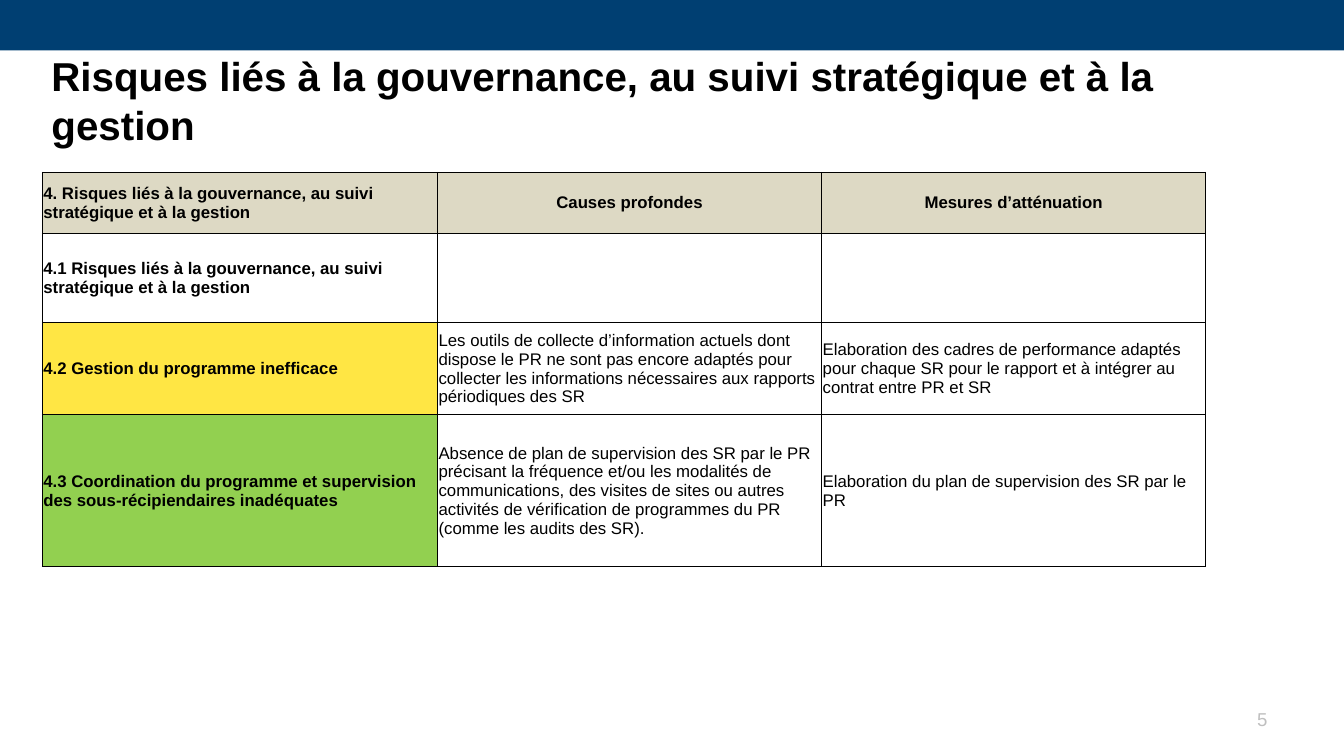
from lxml import etree
from pptx import Presentation
from pptx.dml.color import RGBColor
from pptx.enum.shapes import MSO_SHAPE
from pptx.enum.text import MSO_ANCHOR, MSO_AUTO_SIZE, PP_ALIGN
from pptx.oxml.ns import qn
from pptx.util import Inches, Pt

RECT = MSO_SHAPE.RECTANGLE
TOP, MIDDLE = MSO_ANCHOR.TOP, MSO_ANCHOR.MIDDLE
LEFT, CENTER, RIGHT = PP_ALIGN.LEFT, PP_ALIGN.CENTER, PP_ALIGN.RIGHT
FIXED = MSO_AUTO_SIZE.NONE

TITLE = "Risques liés à la gouvernance, au suivi stratégique et à la gestion"
PAGE = "5"
ROWS = [
    ("4. Risques liés à la gouvernance, au suivi stratégique et à la gestion",
     "Causes profondes",
     "Mesures d’atténuation"),
    ("4.1 Risques liés à la gouvernance, au suivi stratégique et à la gestion",
     "", ""),
    ("4.2 Gestion du programme inefficace",
     "Les outils de collecte d’information actuels dont dispose le PR ne sont "
     "pas encore adaptés pour collecter les informations nécessaires aux "
     "rapports périodiques des SR",
     "Elaboration des cadres de performance adaptés pour chaque SR pour le "
     "rapport et à intégrer au contrat entre PR et SR"),
    ("4.3 Coordination du programme et supervision des sous-récipiendaires "
     "inadéquates",
     "Absence de plan de supervision des SR par le PR précisant la fréquence "
     "et/ou les modalités de communications, des visites de sites ou autres "
     "activités de vérification de programmes du PR (comme les audits des SR).",
     "Elaboration du plan de supervision des SR par le PR"),
]
COLORS = {"band": "003F72", "ink": "000000", "page": "BFBFBF",
          "head": "DDD9C4", "medium": "FFE644", "low": "92D050"}
LEVELS = ["head", None, "medium", "low"]
WIDTHS = [3.92, 3.81, 3.81]
HEIGHTS = [0.6, 0.89, 0.91, 1.51]
FONT = "Arial"


def color(name):
    return RGBColor.from_string(COLORS[name])


def write(frame, text, size, ink="ink", bold=False, align=LEFT):
    frame.text = text
    para = frame.paragraphs[0]
    para.alignment = align
    style = {"name": FONT, "size": Pt(size), "bold": bold}
    for key, value in style.items():
        setattr(para.font, key, value)
    para.font.color.rgb = color(ink)


def inset(item, left, top, right, bottom):
    sides = {"left": left, "top": top, "right": right, "bottom": bottom}
    for side, gap in sides.items():
        setattr(item, f"margin_{side}", Inches(gap))


def border(cell, widths):
    """Put the side lines ahead of the fill, as the schema requires."""
    props = cell._tc.get_or_add_tcPr()
    for spot, (side, width) in enumerate(widths.items()):
        line = etree.Element(qn(f"a:ln{side}"), w=str(Pt(width)))
        fill = etree.SubElement(line, qn("a:solidFill"))
        etree.SubElement(fill, qn("a:srgbClr"), val=COLORS["ink"])
        props.insert(spot, line)


def add_grid(slide):
    last = len(ROWS) - 1
    table = slide.shapes.add_table(
        len(ROWS), len(WIDTHS), Inches(0.42), Inches(1.71),
        Inches(sum(WIDTHS)), Inches(sum(HEIGHTS))).table
    table.first_row = table.horz_banding = False
    for col, width in zip(table.columns, WIDTHS):
        col.width = Inches(width)
    for r, texts in enumerate(ROWS):
        table.rows[r].height = Inches(HEIGHTS[r])
        for c, text in enumerate(texts):
            cell = table.cell(r, c)
            head = r == 0
            write(cell.text_frame, text, 12, bold=head or c == 0,
                  align=CENTER if head and c else LEFT)
            cell.vertical_anchor = MIDDLE
            inset(cell, 0.01, 0.01, 0.01, 0)
            if LEVELS[r] and (head or c == 0):
                cell.fill.solid()
                cell.fill.fore_color.rgb = color(LEVELS[r])
            else:
                cell.fill.background()
            border(cell, {"L": 1, "R": 1, "T": 1 if head else 0.5,
                          "B": 1 if r == last else 0.5})


def main():
    deck = Presentation()
    deck.slide_width, deck.slide_height = Inches(13.33), Inches(7.5)
    slide = deck.slides.add_slide(deck.slide_layouts[5])

    band = slide.shapes.add_shape(RECT, 0, 0, deck.slide_width, Inches(0.5))
    band.shadow.inherit = False
    band.fill.solid()
    band.fill.fore_color.rgb = color("band")
    band.line.fill.background()

    title = slide.shapes.title
    title.left, title.top = Inches(0.51), Inches(0.51)
    title.width, title.height = Inches(11.76), Inches(0.62)
    frame = title.text_frame
    write(frame, TITLE, 28.8, bold=True)
    frame.word_wrap, frame.auto_size = True, FIXED
    frame.vertical_anchor = TOP
    inset(frame, 0, 0, 0, 0.05)

    add_grid(slide)

    page = slide.shapes.add_textbox(
        Inches(9.56), Inches(6.93), Inches(3.11), Inches(0.4)).text_frame
    write(page, PAGE, 13.3, "page", align=RIGHT)
    page.word_wrap = True
    page.vertical_anchor = MIDDLE

    deck.save("out.pptx")


if __name__ == "__main__":
    main()
